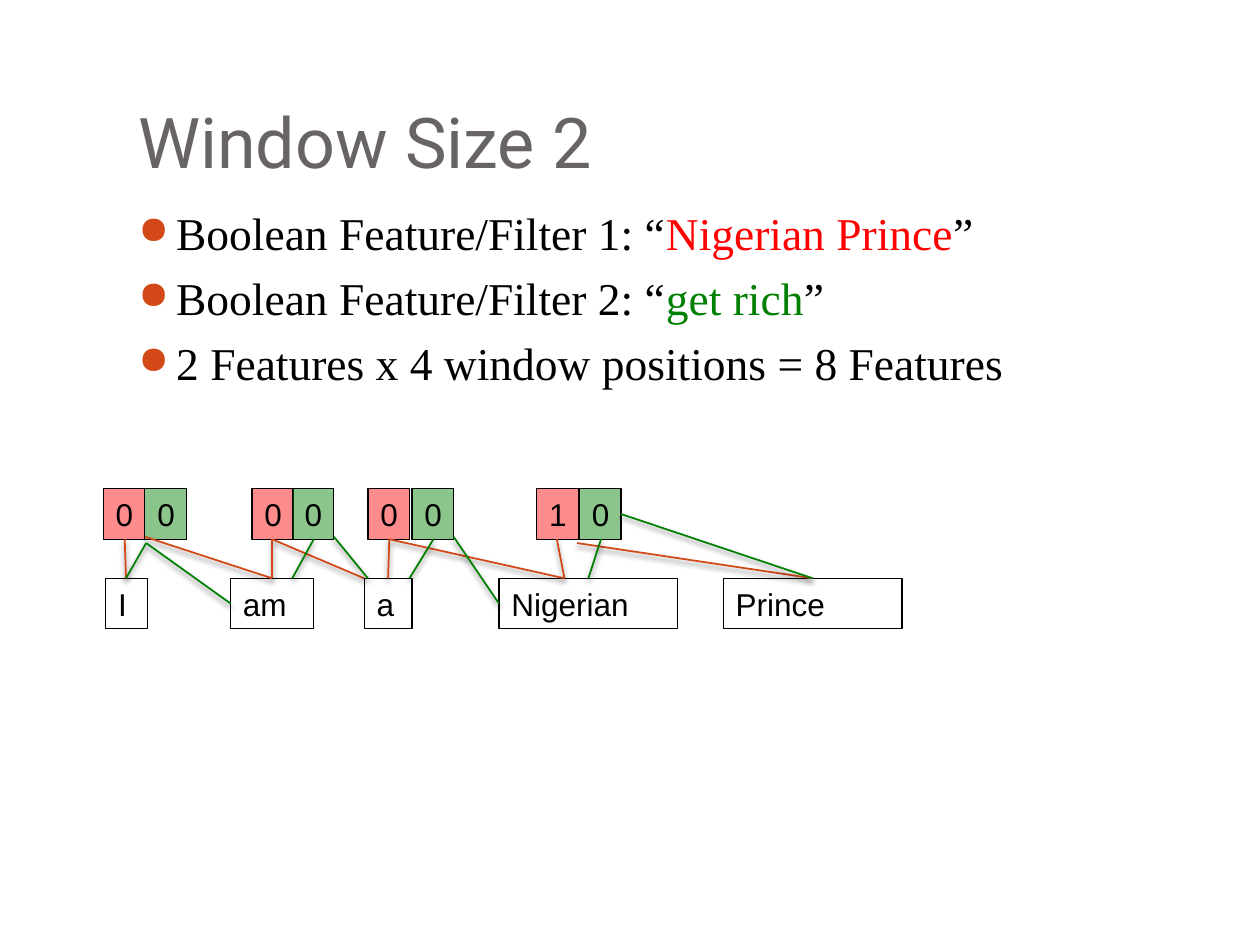
from lxml.etree import SubElement
from pptx import Presentation
from pptx.dml.color import RGBColor
from pptx.enum.shapes import MSO_CONNECTOR as CONN, MSO_SHAPE as SHAPE
from pptx.enum.text import MSO_ANCHOR as ANCHOR, PP_ALIGN as ALIGN
from pptx.oxml.ns import qn
from pptx.util import Inches, Pt

COLORS = {"title": "696464", "text": "000000", "accent": "D34817",
          "red": "FF0000", "green": "008000"}
BULLETS = [
    [("Boolean Feature/Filter 1: “", "text"), ("Nigerian Prince", "red"), ("”", "text")],
    [("Boolean Feature/Filter 2: “", "text"), ("get rich", "green"), ("”", "text")],
    [("2 Features x 4 window positions = 8 Features", "text")],
]

# Diagram positions in inches, from the left and top of the diagram
CELL_W, BOX_H, WORD_Y = 0.33, 0.4, 0.71
WORD_MID = WORD_Y + BOX_H / 2
WORDS = [("I", 0.02, 0.33), ("am", 1.01, 0.66), ("a", 2.07, 0.38),
         ("Nigerian", 3.14, 1.42), ("Prince", 4.92, 1.42)]
# Each window position: left and value of the red and of the green cell
WINDOWS = [((0, "0"), (0.33, "0")), ((1.18, "0"), (1.5, "0")),
           ((2.1, "0"), (2.45, "0")), ((3.44, "1"), (3.78, "0"))]
# Each link: x and y at the word, x and y at the cell
RED_LINKS = [
    (0.18, WORD_Y, 0.17, BOX_H), (1.34, WORD_Y, 0.33, 0.38),
    (1.34, WORD_Y, 1.34, BOX_H), (2.07, WORD_Y, 1.34, BOX_H),
    (2.26, WORD_Y, 2.27, BOX_H), (3.66, WORD_Y, 2.27, BOX_H),
    (3.66, WORD_Y, 3.6, BOX_H), (5.63, WORD_Y, 3.76, 0.43),
]
GREEN_LINKS = [
    (0.18, WORD_Y, 0.34, 0.43), (1.01, WORD_MID, 0.34, 0.43),
    (1.5, WORD_Y, 1.67, BOX_H), (2.1, WORD_Y, 1.83, 0.38),
    (2.43, WORD_Y, 2.62, BOX_H), (3.14, WORD_MID, 2.78, 0.38),
    (3.85, WORD_Y, 3.95, BOX_H), (5.63, WORD_Y, 4.11, BOX_H / 2),
]


def rgb(name):
    return RGBColor.from_string(COLORS[name])


def style_run(r, font, size, color):
    r.font.name, r.font.size = font, Pt(size)
    r.font.color.rgb = rgb(color)


def add_title(slide, left, top, width, height):
    tf = slide.shapes.add_textbox(left, top, width, height).text_frame
    tf.word_wrap = True
    tf.vertical_anchor = ANCHOR.BOTTOM
    tf.margin_bottom = Inches(0.1)
    tf.text = "Window Size 2"
    style_run(tf.paragraphs[0].runs[0], "Roboto", 40, "title")


def set_bullet(p):
    pPr = p._p.get_or_add_pPr()
    pPr.set("marL", str(Inches(0.3)))
    pPr.set("indent", str(Inches(-0.3)))
    clr = SubElement(pPr, qn("a:buClr"))
    SubElement(clr, qn("a:srgbClr"), val=COLORS["accent"])
    SubElement(pPr, qn("a:buSzPct"), val="85000")
    SubElement(pPr, qn("a:buChar"), char="●")


def add_bullets(slide, left, top, width, height):
    tf = slide.shapes.add_textbox(left, top, width, height).text_frame
    tf.word_wrap = True
    for i, parts in enumerate(BULLETS):
        p = tf.add_paragraph() if i else tf.paragraphs[0]
        p.space_before = Pt(5.8)
        set_bullet(p)
        for text, color in parts:
            r = p.add_run()
            r.text = text
            style_run(r, "Times New Roman", 26, color)


def add_box(slide, left, top, width, text, fill=None):
    """Outlined box with a label; a fill colour is drawn at 45% opacity."""
    sp = slide.shapes.add_shape(SHAPE.RECTANGLE, left, top, width, Inches(BOX_H))
    sp.shadow.inherit = False
    if fill:
        sp.fill.solid()
        sp.fill.fore_color.rgb = rgb(fill)
        color = sp.fill._xPr.find(qn("a:solidFill"))[0]
        SubElement(color, qn("a:alpha"), val="45000")
    else:
        sp.fill.background()
    sp.line.color.rgb = rgb("text")
    sp.line.width = Pt(0.75)
    tf = sp.text_frame
    tf.word_wrap = True
    tf.vertical_anchor = ANCHOR.TOP
    tf.text = text
    p = tf.paragraphs[0]
    p.alignment = ALIGN.LEFT
    style_run(p.runs[0], "Arial", 18, "text")


def add_link(slide, x1, y1, x2, y2, color):
    """Thin line with a soft shadow below it."""
    line = slide.shapes.add_connector(CONN.STRAIGHT, x1, y1, x2, y2)
    line.line.color.rgb = rgb(color)
    line.line.width = Pt(1)
    effects = SubElement(line._element.spPr, qn("a:effectLst"))
    shadow = SubElement(effects, qn("a:outerShdw"), blurRad=str(Pt(3)),
                        dist=str(Pt(2)), dir="5400000", rotWithShape="0")
    clr = SubElement(shadow, qn("a:srgbClr"), val=COLORS["text"])
    SubElement(clr, qn("a:alpha"), val="50000")


def add_window_diagram(slide, left, top):
    for word, x, width in WORDS:
        add_box(slide, left + Inches(x), top + Inches(WORD_Y), Inches(width), word)
    for cells in WINDOWS:
        for (x, value), fill in zip(cells, ("red", "green")):
            add_box(slide, left + Inches(x), top, Inches(CELL_W), value, fill)
    for links, color in ((RED_LINKS, "accent"), (GREEN_LINKS, "green")):
        for x1, y1, x2, y2 in links:
            add_link(slide, left + Inches(x1), top + Inches(y1),
                     left + Inches(x2), top + Inches(y2), color)


def main():
    prs = Presentation()
    prs.slide_width, prs.slide_height = Inches(10), Inches(7.5)
    slide = prs.slides.add_slide(prs.slide_layouts[6])
    add_title(slide, Inches(1), Inches(0.3), Inches(8.5), Inches(1.25))
    add_bullets(slide, Inches(1), Inches(1.58), Inches(8.5), Inches(1.51))
    add_window_diagram(slide, Inches(0.82), Inches(3.88))
    prs.save("out.pptx")


if __name__ == "__main__":
    main()
